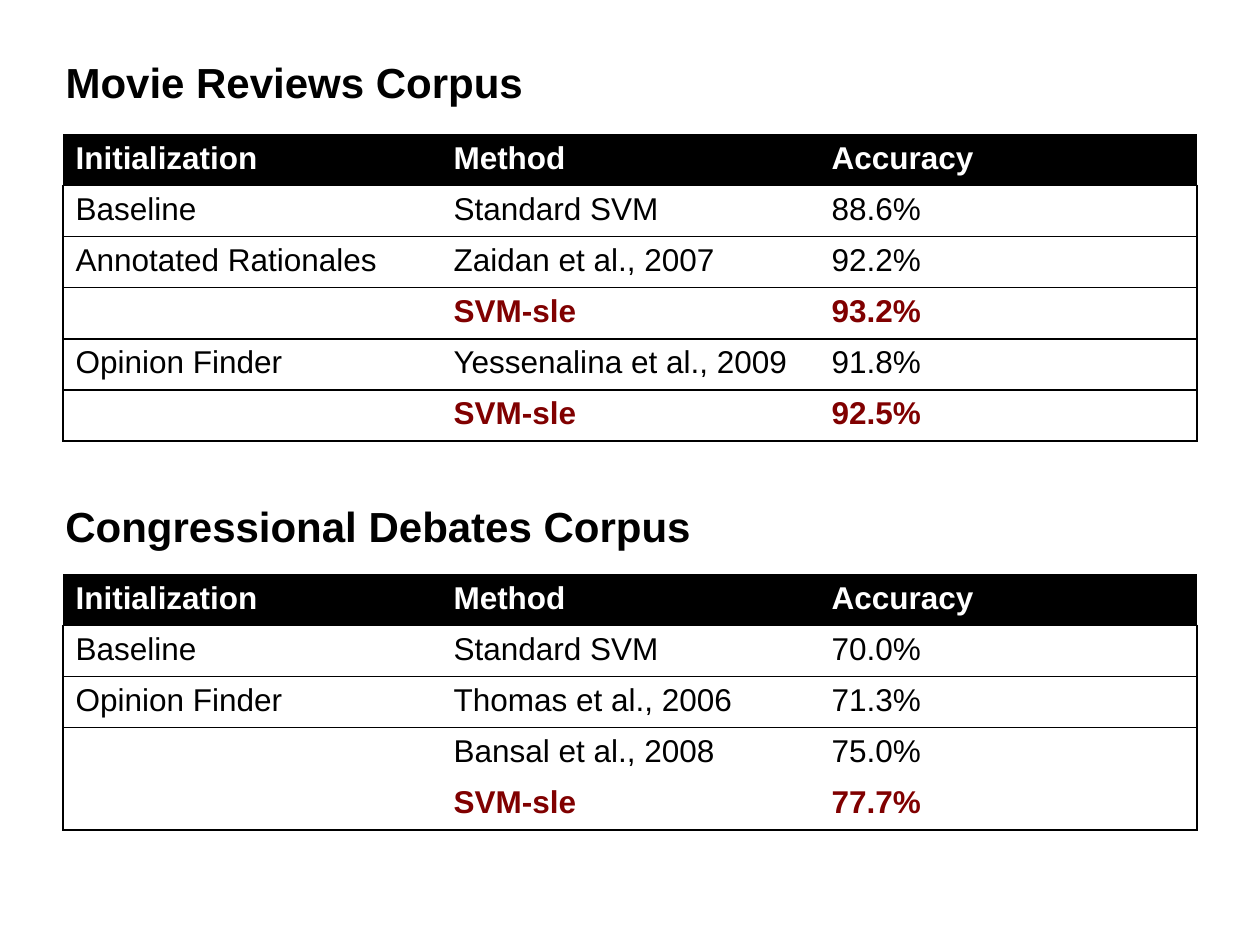
from dataclasses import dataclass

from lxml.etree import SubElement
from pptx import Presentation
from pptx.dml.color import RGBColor
from pptx.enum.text import MSO_ANCHOR, MSO_AUTO_SIZE, PP_ALIGN
from pptx.oxml.ns import qn
from pptx.util import Pt


@dataclass(frozen=True)
class Theme:
    font: str = "Arial"
    ink: str = "000000"
    paper: str = "FFFFFF"
    accent: str = "800000"
    heading_size: float = 24
    body_size: float = 18
    line_width: float = 1


THEME = Theme()
LEFT, WIDTH, ROW_HEIGHT = 36, 648, 29.2
HEADING_LEFT, HEADING_HEIGHT = 30.24, 36
HEADER = ("Initialization", "Method", "Accuracy")
OWN_METHOD = "SVM-sle"

MOVIE_ROWS = [
    ("Baseline", "Standard SVM", "88.6%"),
    ("Annotated Rationales", "Zaidan et al., 2007", "92.2%"),
    ("", OWN_METHOD, "93.2%"),
    ("Opinion Finder", "Yessenalina et al., 2009", "91.8%"),
    ("", OWN_METHOD, "92.5%"),
]
DEBATE_ROWS = [
    ("Baseline", "Standard SVM", "70.0%"),
    ("Opinion Finder", "Thomas et al., 2006", "71.3%"),
    ("", "Bansal et al., 2008", "75.0%"),
    ("", OWN_METHOD, "77.7%"),
]


def apply_format(target, values):
    for name, value in values.items():
        setattr(target, name, value)


def write_text(para, text, size, color, bold):
    span = para.add_run()
    span.text = text
    apply_format(span.font, {"name": THEME.font, "size": Pt(size), "bold": bold})
    span.font.color.rgb = RGBColor.from_string(color)


def fill_heading(box, text, top, width):
    apply_format(box, {
        "left": Pt(HEADING_LEFT), "top": Pt(top),
        "width": Pt(width), "height": Pt(HEADING_HEIGHT),
    })
    apply_format(box.text_frame, {
        "word_wrap": False,
        "auto_size": MSO_AUTO_SIZE.SHAPE_TO_FIT_TEXT,
        "vertical_anchor": MSO_ANCHOR.TOP,
    })
    para = box.text_frame.paragraphs[0]
    para.alignment = PP_ALIGN.LEFT
    write_text(para, text, THEME.heading_size, THEME.ink, True)


def set_borders(cell, visible):
    properties = cell._tc.get_or_add_tcPr()
    for side in "LRTB":
        line = SubElement(properties, qn(f"a:ln{side}"), w=str(Pt(THEME.line_width)))
        if side in visible:
            fill = SubElement(line, qn("a:solidFill"))
            SubElement(fill, qn("a:srgbClr"), val=THEME.ink)
        else:
            SubElement(line, qn("a:noFill"))


def visible_sides(row, column, last_row, open_rows):
    sides = set()
    if row > 0 and column == 0:
        sides.add("L")
    if row > 0 and column == len(HEADER) - 1:
        sides.add("R")
    if row > 0 and row - 1 not in open_rows:
        sides.add("T")
    if row == last_row or row not in open_rows:
        sides.add("B")
    return sides


def add_results_table(page, top, results, open_rows=()):
    rows = [HEADER, *results]
    frame = page.shapes.add_table(
        len(rows), len(HEADER), Pt(LEFT), Pt(top), Pt(WIDTH), Pt(ROW_HEIGHT * len(rows)))
    table = frame.table
    table.horz_banding = False
    for row, values in enumerate(rows):
        table.rows[row].height = Pt(ROW_HEIGHT)
        is_header = row == 0
        is_own = values[1] == OWN_METHOD
        color = THEME.paper if is_header else THEME.accent if is_own else THEME.ink
        for column, value in enumerate(values):
            cell = table.cell(row, column)
            set_borders(cell, visible_sides(row, column, len(rows) - 1, open_rows))
            cell.fill.solid()
            cell.fill.fore_color.rgb = RGBColor.from_string(
                THEME.ink if is_header else THEME.paper)
            if value:
                write_text(cell.text_frame.paragraphs[0], value,
                           THEME.body_size, color, is_header or is_own)


def main():
    deck = Presentation()
    apply_format(deck, {"slide_width": Pt(720), "slide_height": Pt(540)})
    page = deck.slides.add_slide(deck.slide_layouts[5])
    fill_heading(page.shapes.title, "Movie Reviews Corpus", 28.8, 278.64)
    add_results_table(page, 76.8, MOVIE_ROWS)
    debates_heading = page.shapes.add_textbox(0, 0, 0, 0)
    fill_heading(debates_heading, "Congressional Debates Corpus", 282.24, 375.12)
    add_results_table(page, 328.2, DEBATE_ROWS, open_rows=(3,))
    deck.save("out.pptx")


if __name__ == "__main__":
    main()
